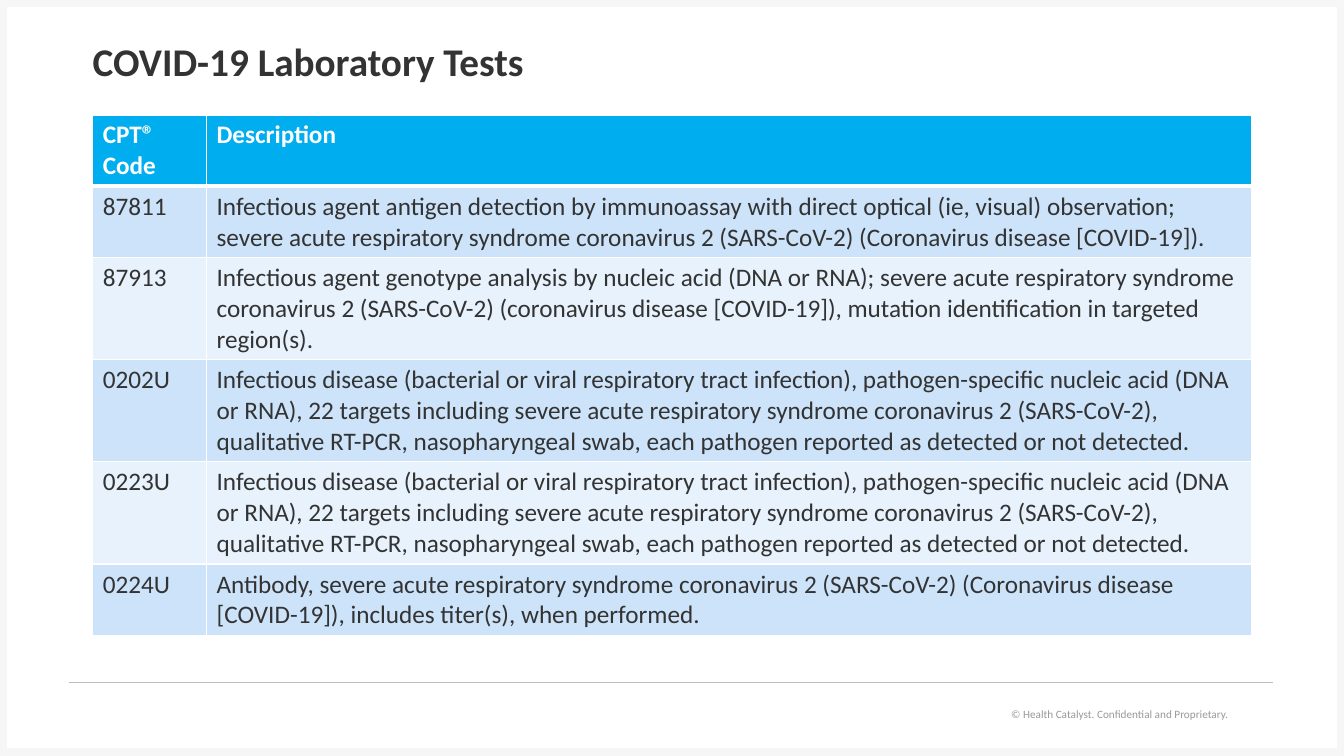
from pptx import Presentation
from pptx import util as u
from pptx.dml.color import RGBColor
from pptx.enum import shapes, text
from pptx.oxml import parse_xml
from pptx.oxml.ns import nsdecls

RESPIRATORY_PANEL = (
    "Infectious disease (bacterial or viral respiratory tract infection), "
    "pathogen-specific nucleic acid (DNA or RNA), 22 targets including severe acute "
    "respiratory syndrome coronavirus 2 (SARS-CoV-2), qualitative RT-PCR, "
    "nasopharyngeal swab, each pathogen reported as detected or not detected."
)
LAB_TESTS = [
    ("CPT® Code", "Description"),
    ("87811", "Infectious agent antigen detection by immunoassay with direct optical "
     "(ie, visual) observation; severe acute respiratory syndrome coronavirus 2 "
     "(SARS-CoV-2) (Coronavirus disease [COVID-19])."),
    ("87913", "Infectious agent genotype analysis by nucleic acid (DNA or RNA); severe "
     "acute respiratory syndrome coronavirus 2 (SARS-CoV-2) (coronavirus disease "
     "[COVID-19]), mutation identification in targeted region(s)."),
    ("0202U", RESPIRATORY_PANEL),
    ("0223U", RESPIRATORY_PANEL),
    ("0224U", "Antibody, severe acute respiratory syndrome coronavirus 2 (SARS-CoV-2) "
     "(Coronavirus disease [COVID-19]), includes titer(s), when performed."),
]
ROW_LINES = [2, 2, 3, 3, 3, 2]


def rgb(value):
    """Turn a hex string into a colour."""
    return RGBColor.from_string(value)


class Deck:
    """Holds the style and the current slide; lengths are percents of the slide."""

    font, ink, accent, white = "Calibri", "333333", "00AEEF", "FFFFFF"
    bands = ("CCE3F9", "E7F2FC")

    def __init__(self):
        """Open a widescreen deck with one title-only slide."""
        self.prs = Presentation()
        self.prs.slide_width, self.prs.slide_height = u.Inches(13.33), u.Inches(7.5)
        self.s = self.prs.slides.add_slide(self.prs.slide_layouts[5])

    def x(self, share):
        """Convert a percent of the width to a length."""
        return u.Emu(int(self.prs.slide_width * share / 100))

    def y(self, share):
        """Convert a percent of the height to a length."""
        return u.Emu(int(self.prs.slide_height * share / 100))

    def box(self, left, top, width, height):
        """Convert a box in percents to lengths."""
        return self.x(left), self.y(top), self.x(width), self.y(height)

    def put_text(self, tf, words, size, color, bold=False, align=text.PP_ALIGN.LEFT):
        """Fill a text frame with one formatted paragraph."""
        tf.text = words
        tf.word_wrap = True
        p = tf.paragraphs[0]
        p.alignment = align
        font = p.runs[0].font
        font.name, font.size, font.bold = self.font, u.Pt(size), bold
        font.color.rgb = rgb(color)
        return p

    def title(self, words, *box):
        """Place and format the title placeholder."""
        sp = self.s.shapes.title
        sp.left, sp.top, sp.width, sp.height = self.box(*box)
        tf = sp.text_frame
        tf.margin_left = 0
        tf.vertical_anchor = text.MSO_ANCHOR.MIDDLE
        tf.auto_size = text.MSO_AUTO_SIZE.NONE
        self.put_text(tf, words, 28, self.ink, bold=True).line_spacing = 0.9

    def frame(self, color, weight, *box):
        """Draw an unfilled rectangle."""
        sp = self.s.shapes.add_shape(shapes.MSO_SHAPE.RECTANGLE, *self.box(*box))
        sp.shadow.inherit = False
        sp.fill.background()
        sp.line.color.rgb, sp.line.width = rgb(color), u.Pt(weight)

    def footer(self, words, *box):
        """Add a small right-aligned line of text on white."""
        sp = self.s.shapes.add_textbox(*self.box(*box))
        sp.fill.solid()
        sp.fill.fore_color.rgb = rgb(self.white)
        self.put_text(sp.text_frame, words, 8, "999999", align=text.PP_ALIGN.RIGHT)

    def rule(self, left, right, top):
        """Draw a thin horizontal line."""
        cx = self.s.shapes.add_connector(
            shapes.MSO_CONNECTOR.STRAIGHT,
            self.x(left), self.y(top), self.x(right), self.y(top))
        cx.line.color.rgb, cx.line.width = rgb("BCBEBC"), u.Pt(0.75)
        cx._element.spPr.append(parse_xml(f"<a:effectLst {nsdecls('a')}/>"))

    def borders(self, cell, **weights):
        """Give a cell white borders of the given weights in points."""
        for side, weight in weights.items():
            cell._tc.get_or_add_tcPr().append(parse_xml(
                f'<a:ln{side} {nsdecls("a")} w="{u.Pt(weight)}"><a:solidFill>'
                f'<a:srgbClr val="{self.white}"/></a:solidFill></a:ln{side}>'))

    def table(self, rows, lines, columns, left, top):
        """Add a banded table with row heights set by the lines of text."""
        heights = [self.y(1.3 + 4.07 * n) for n in lines]
        table = self.s.shapes.add_table(
            len(rows), len(columns), self.x(left), self.y(top),
            self.x(sum(columns)), u.Emu(sum(heights))).table
        for column, width in zip(table.columns, columns):
            column.width = self.x(width)
        for i, (values, height) in enumerate(zip(rows, heights)):
            table.rows[i].height = height
            header = i == 0
            for j, value in enumerate(values):
                cell = table.cell(i, j)
                self.borders(cell, L=1, R=1, T=3 if i == 1 else 1, B=3 if header else 1)
                cell.fill.solid()
                cell.fill.fore_color.rgb = rgb(self.accent if header else self.bands[(i - 1) % 2])
                self.put_text(cell.text_frame, value, 18,
                              self.white if header else self.ink, bold=header)


def main():
    """Build the laboratory tests slide."""
    deck = Deck()
    deck.frame("F6F6F6", 7.75, 0.15, 0.27, 99.7, 99.46)
    deck.footer("© Health Catalyst. Confidential and Proprietary.", 73.75, 92.93, 18.4, 3.2)
    deck.rule(5.1, 94.75, 90.27)
    deck.title("COVID-19 Laboratory Tests", 6.9, 5.33, 86.25, 6.13)
    deck.table(LAB_TESTS, ROW_LINES, (8.47, 77.78), 6.9, 15.2)
    deck.prs.save("out.pptx")


if __name__ == "__main__":
    main()
